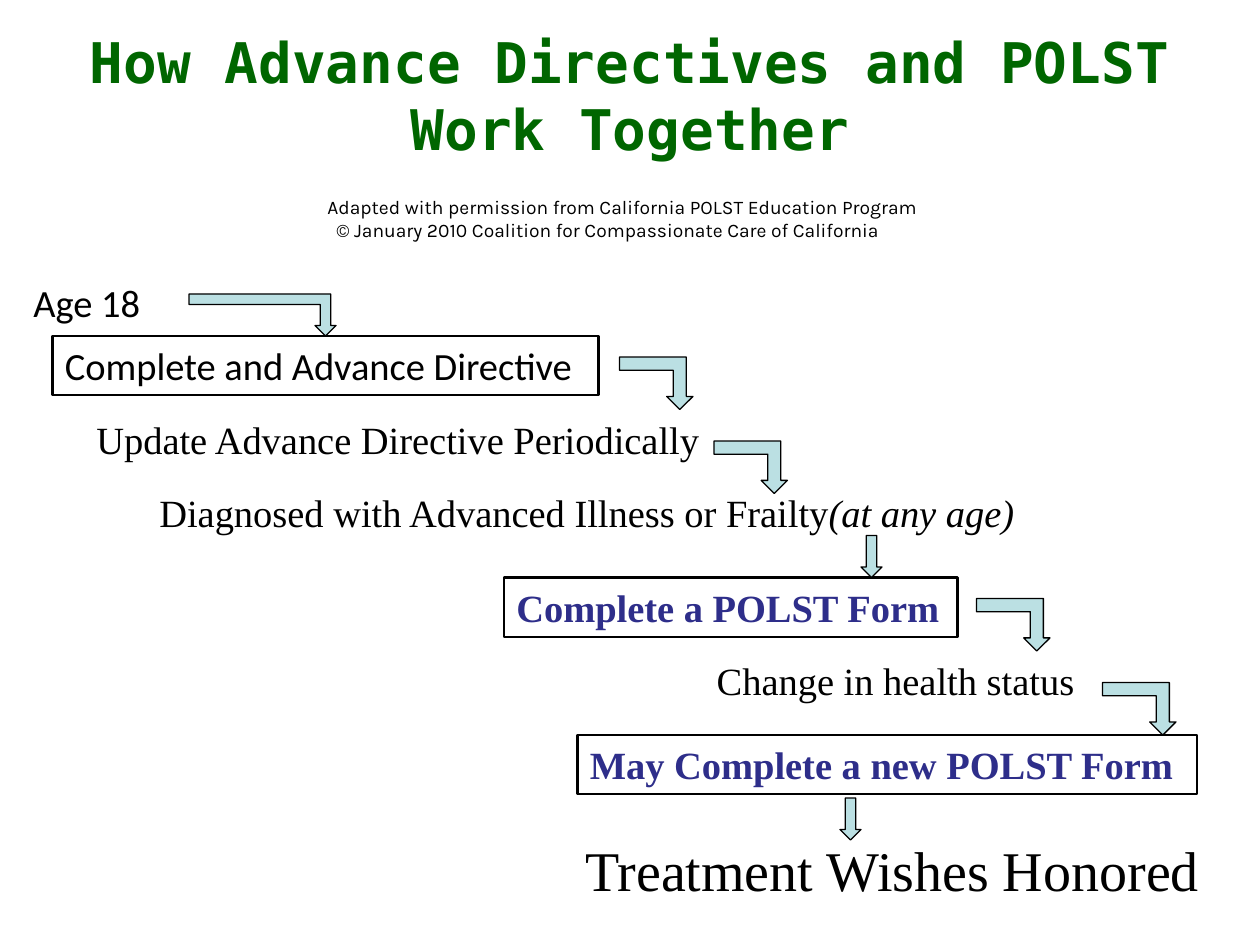
from collections import namedtuple

from pptx import Presentation
from pptx.dml.color import RGBColor
from pptx.enum.shapes import MSO_SHAPE as Shape
from pptx.enum.text import MSO_ANCHOR as Anchor, MSO_AUTO_SIZE as AutoSize, PP_ALIGN as Align
from pptx.oxml.ns import qn
from pptx.util import Cm, Pt

Box = namedtuple("Box", "left top width height")
Step = namedtuple("Step", "text box font size color bold border wrap align",
                  defaults=("Times New Roman", 22, "000000", False, 0, True, Align.LEFT))

GREEN, BLUE, BLACK, PALE = "006600", "2E2E8A", "000000", "BBE0E3"
LINE = 5.64  # height of one step, in grid units

# Boxes are in grid units, relative to the flow area.
STEPS = [
    Step("Age 18", Box(0, 0, 16, LINE), font="Calibri"),
    Step("Complete and Advance Directive", Box(3, 6, 52, LINE), font="Calibri", border=1.5),
    Step("Update Advance Directive Periodically", Box(6, 13, 60, LINE)),
    Step("Diagnosed with Advanced Illness or Frailty|(at any age)", Box(12, 20, 84, LINE)),
    Step("Complete a POLST Form", Box(46, 29, 43.2, LINE),
         color=BLUE, bold=True, border=1.25, wrap=False),
    Step("Change in health status", Box(65.08, 36, 36.84, LINE), wrap=False),
    Step("May Complete a new POLST Form", Box(53, 44, 59, LINE),
         color=BLUE, bold=True, border=1.25),
    Step("Treatment Wishes Honored", Box(52, 53, 61.44, 7.68),
         size=32, wrap=False, align=Align.RIGHT),
]
BENT_ARROWS = [Box(16, 2, 14, 4)] + [
    Box(left, top, 7, 5) for left, top in [(57, 8), (66, 16), (91, 31), (103, 39)]]
DOWN_ARROWS = [Box(left, top, 2, 4) for left, top in [(80, 25), (78, 50)]]


def grid(count):
    """Length of so many twelfths of an inch."""
    return Cm(count * 2.54 / 12)


def lengths(box, area=Box(0, 0, 0, 0)):
    """Position and size of a box placed inside an area."""
    return [grid(n) for n in (area.left + box.left, area.top + box.top, box.width, box.height)]


def color(hex_text):
    return RGBColor.from_string(hex_text)


def style(span, font, size, hex_text, bold=False):
    span.font.name = font
    span.font.size = Pt(size)
    span.font.bold = bold
    span.font.color.rgb = color(hex_text)


def draw_title(page, box):
    title = page.shapes.title
    title.left, title.top, title.width, title.height = lengths(box)
    frame = title.text_frame
    frame.text = "How Advance Directives and POLST Work Together"
    frame.word_wrap = True
    frame.auto_size = AutoSize.NONE
    frame.vertical_anchor = Anchor.MIDDLE
    para = frame.paragraphs[0]
    para.alignment = Align.CENTER
    style(para.runs[0], "DejaVu Sans Mono", 32, GREEN, bold=True)


def draw_credit(page, box):
    frame = page.shapes.add_textbox(*lengths(box)).text_frame
    frame.word_wrap = True
    frame.auto_size = AutoSize.SHAPE_TO_FIT_TEXT
    para = frame.paragraphs[0]
    para.text = ("Adapted with permission from California POLST Education Program\v"
                 "© January 2010 Coalition for Compassionate Care of California")
    # A hanging indent sets the second line slightly to the right.
    properties = para._p.get_or_add_pPr()
    properties.set("marL", str(Cm(0.18)))
    properties.set("indent", str(-Cm(0.18)))
    for span in para.runs:
        style(span, "Karla", 11, BLACK)


def draw_step(page, area, step):
    """A line of text, framed if it has a border; text after a bar is italic."""
    place = lengths(step.box, area)
    if step.border:
        shape = page.shapes.add_shape(Shape.RECTANGLE, *place)
        shape.shadow.inherit = False
        shape.fill.background()
        shape.line.color.rgb = color(BLACK)
        shape.line.width = Pt(step.border)
    else:
        shape = page.shapes.add_textbox(*place)
    frame = shape.text_frame
    frame.word_wrap = step.wrap
    frame.auto_size = AutoSize.SHAPE_TO_FIT_TEXT
    frame.vertical_anchor = Anchor.TOP
    para = frame.paragraphs[0]
    para.alignment = step.align
    for index, part in enumerate(step.text.split("|")):
        span = para.add_run()
        span.text = part
        style(span, step.font, step.size, step.color, step.bold)
        span.font.italic = index > 0


def draw_arrow(page, area, kind, box):
    arrow = page.shapes.add_shape(kind, *lengths(box, area))
    arrow.shadow.inherit = False
    arrow.fill.solid()
    arrow.fill.fore_color.rgb = color(PALE)
    arrow.line.color.rgb = color(BLACK)
    arrow.line.width = Pt(0.75)
    return arrow


def draw_flow(page, area):
    for step in STEPS:
        draw_step(page, area, step)
    for box in BENT_ARROWS:
        arrow = draw_arrow(page, area, Shape.BENT_UP_ARROW, box)
        arrow.rotation = 180
        arrow._element.spPr.find(qn("a:xfrm")).set("flipH", "1")
    for box in DOWN_ARROWS:
        draw_arrow(page, area, Shape.DOWN_ARROW, box)


def main():
    deck = Presentation()
    deck.slide_width, deck.slide_height = Cm(25.4), Cm(19.05)
    page = deck.slides.add_slide(deck.slide_layouts[5])
    draw_title(page, Box(0, 0, 120, 18))
    draw_credit(page, Box(30, 18, 60, LINE))
    draw_flow(page, Box(2, 26, 114, 61))
    deck.save("out.pptx")


if __name__ == "__main__":
    main()
